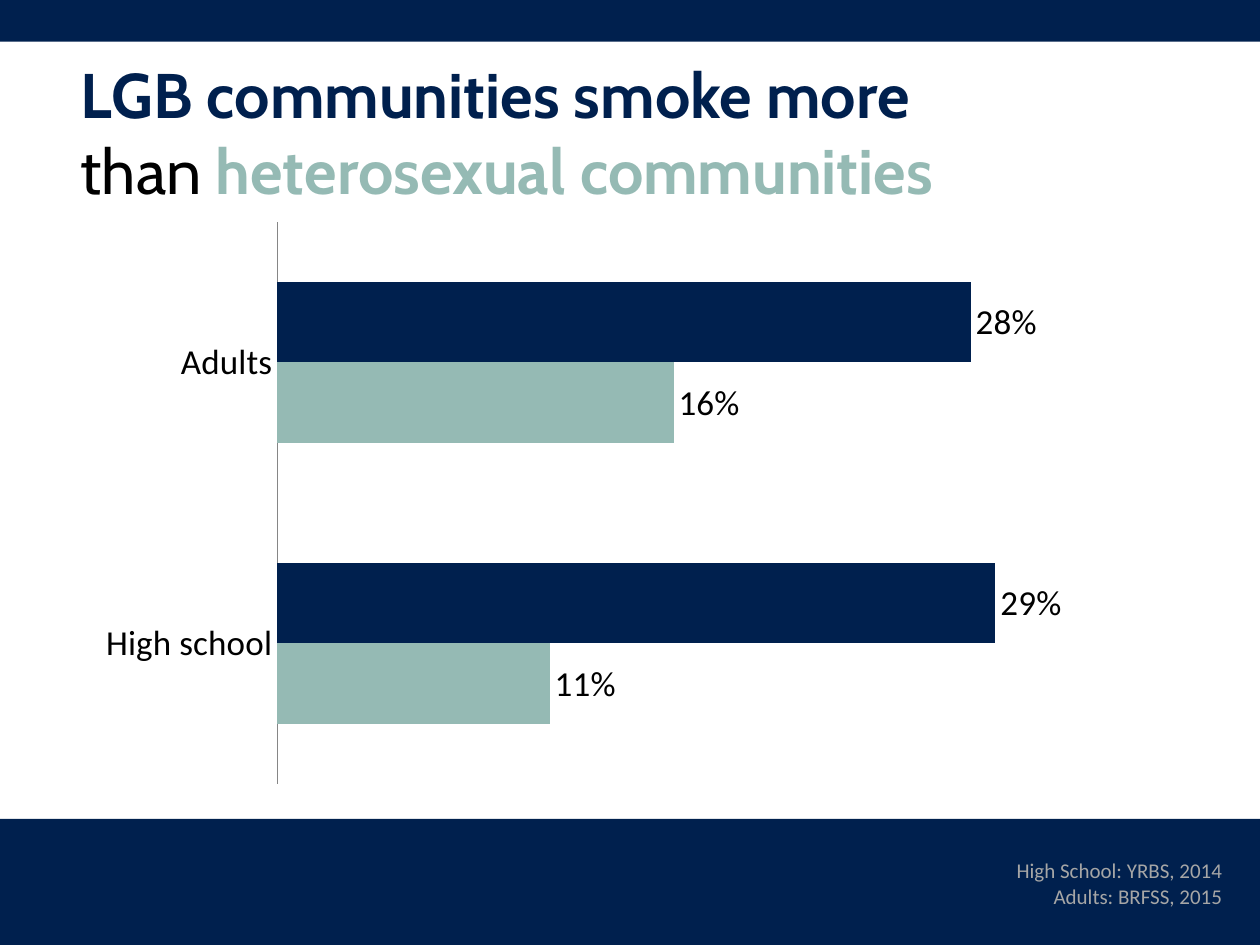
import pptx
import pptx.chart.data
import pptx.dml.color
import pptx.enum.chart
import pptx.enum.shapes
import pptx.enum.text
import pptx.util
from pptx.util import Cm, Pt

COLORS = {
    "navy": "00204E",
    "sage": "95BAB4",
    "black": "000000",
    "source": "A6A6A6",
    "axis": "868686",
}


def rgb(name):
    """Return the named colour."""
    return pptx.dml.color.RGBColor.from_string(COLORS[name])


def style_font(font, name, size, color, bold=False):
    """Set the face, size, colour and weight of a font."""
    font.name = name
    font.size = Pt(size)
    font.bold = bold
    font.color.rgb = rgb(color)


def add_band(s, left, top, width, height):
    """Add a navy band across the slide."""
    kind = pptx.enum.shapes.MSO_SHAPE.RECTANGLE
    sp = s.shapes.add_shape(kind, Cm(left), Cm(top), Cm(width), Cm(height))
    sp.shadow.inherit = False
    sp.fill.solid()
    sp.fill.fore_color.rgb = rgb("navy")
    sp.line.fill.background()


def add_text_frame(s, left, top, width, height):
    """Add a wrapping text box and return its text frame."""
    sp = s.shapes.add_textbox(Cm(left), Cm(top), Cm(width), Cm(height))
    tf = sp.text_frame
    tf.word_wrap = True
    return tf


def add_title(s, parts):
    """Add the headline from (text, colour, bold) parts."""
    tf = add_text_frame(s, -0.2, -0.43, 19.48, 6.15)
    tf.vertical_anchor = pptx.enum.text.MSO_ANCHOR.MIDDLE
    tf.margin_left = Cm(1.83)
    p = tf.paragraphs[0]
    for text, color, bold in parts:
        r = p.add_run()
        r.text = text
        style_font(r.font, "Cabin", 36, color, bold)


def add_sources(s, lines):
    """Add the right-aligned source lines."""
    tf = add_text_frame(s, 16.89, 17.17, 8, 1.27)
    tf.text = "\n".join(lines)
    for p in tf.paragraphs:
        p.alignment = pptx.enum.text.PP_ALIGN.RIGHT
        style_font(p.runs[0].font, "Calibri", 12, "source")


def style_axes(chart):
    """Show a plain category axis and hide the value axis."""
    no_tick = pptx.enum.chart.XL_TICK_MARK.NONE
    cat = chart.category_axis
    cat.major_tick_mark = cat.minor_tick_mark = no_tick
    cat.format.line.color.rgb = rgb("axis")
    style_font(cat.tick_labels.font, "Calibri", 20, "black")
    val = chart.value_axis
    val.visible = False
    val.has_major_gridlines = False
    val.minimum_scale, val.maximum_scale = 0, 0.35


def add_bar_chart(s, categories, series):
    """Add the clustered bars from (name, values, colour) series."""
    data = pptx.chart.data.CategoryChartData(number_format="0%")
    data.categories = categories
    for name, values, _ in series:
        data.add_series(name, values)
    kind = pptx.enum.chart.XL_CHART_TYPE.BAR_CLUSTERED
    frame = s.shapes.add_chart(kind, Cm(1.7), Cm(4.24), Cm(21.8), Cm(11.8), data)
    chart = frame.chart
    chart.has_legend = False
    chart.has_title = False
    style_font(chart.font, "Calibri", 18, "black")
    style_axes(chart)
    plot = chart.plots[0]
    plot.gap_width = 150
    plot.vary_by_categories = False
    for ser, (_, _, color) in zip(plot.series, series):
        ser.format.fill.solid()
        ser.format.fill.fore_color.rgb = rgb(color)
        labels = ser.data_labels
        labels.show_value = True
        labels.number_format = "0%"
        labels.number_format_is_linked = False
        labels.position = pptx.enum.chart.XL_LABEL_POSITION.OUTSIDE_END
        style_font(labels.font, "Calibri", 20, "black")


def main():
    """Build the slide and save it."""
    prs = pptx.Presentation()
    prs.slide_width, prs.slide_height = Cm(25.4), Cm(19.05)
    s = prs.slides.add_slide(prs.slide_layouts[6])
    add_title(s, [
        ("LGB communities smoke more ", "navy", True),
        ("than ", "black", False),
        ("heterosexual communities", "sage", True),
    ])
    add_band(s, -0.43, 16.51, 26.47, 2.54)
    add_sources(s, ["High School: YRBS, 2014", "Adults: BRFSS, 2015"])
    add_bar_chart(s, ["High school", "Adults"], [
        ("Series 1", (0.11, 0.16), "sage"),
        ("Series 2", (0.29, 0.28), "navy"),
    ])
    add_band(s, -0.2, 0, 25.83, 0.84)
    prs.save("out.pptx")


if __name__ == "__main__":
    main()
